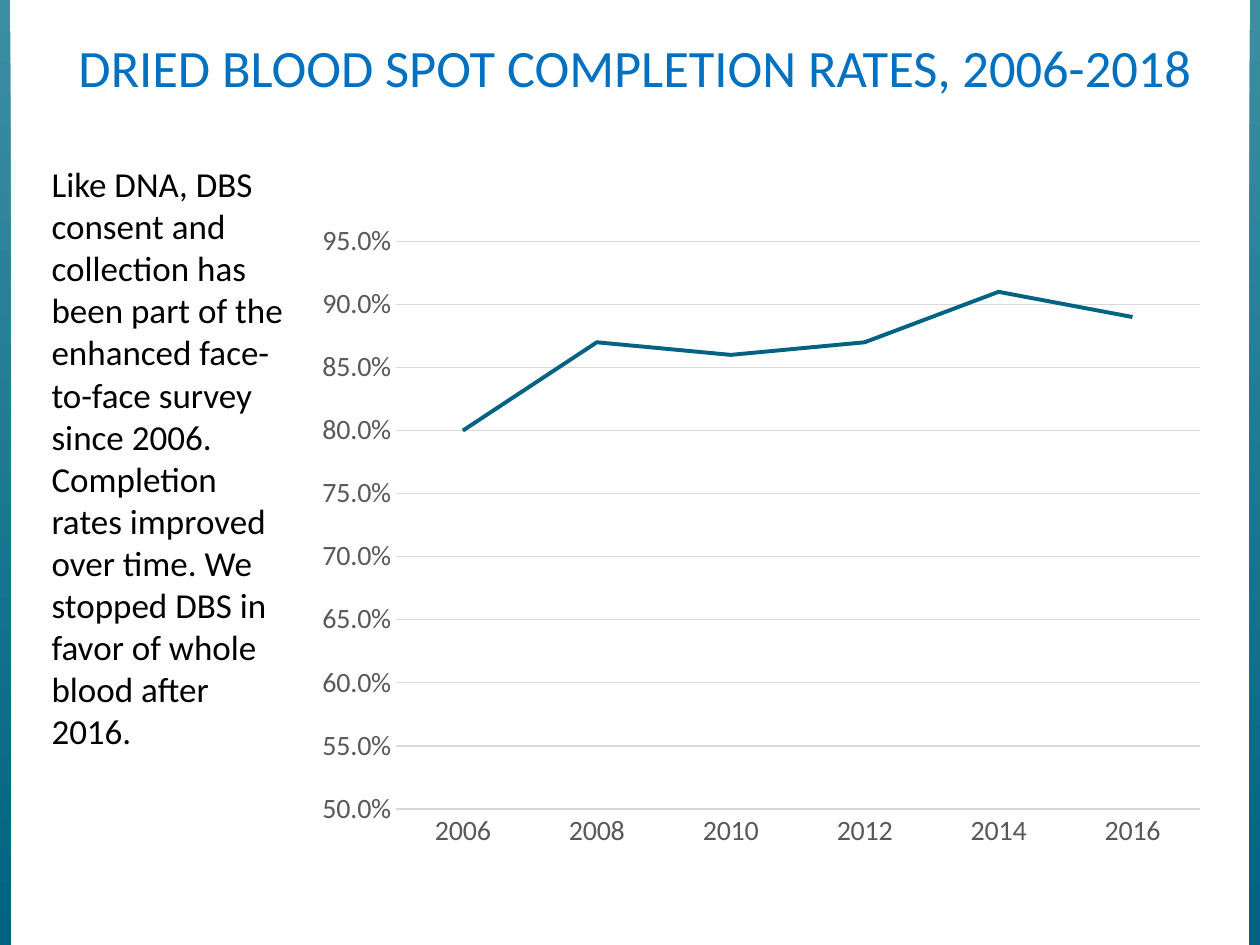
from dataclasses import dataclass

from pptx import Presentation
from pptx.chart.data import CategoryChartData
from pptx.dml.color import RGBColor
from pptx.enum.chart import XL_CHART_TYPE, XL_TICK_MARK
from pptx.enum.shapes import MSO_SHAPE
from pptx.enum.text import MSO_ANCHOR, PP_ALIGN
from pptx.util import Cm, Pt

LINE_CHART = XL_CHART_TYPE.LINE
NO_TICK = XL_TICK_MARK.NONE
RECTANGLE = MSO_SHAPE.RECTANGLE
TOP = MSO_ANCHOR.TOP
LEFT, CENTER = PP_ALIGN.LEFT, PP_ALIGN.CENTER

FONT = "Calibri"
TEAL, LIGHT_TEAL, BLUE = "006382", "3C8EA1", "0070C0"
BLACK, AXIS_GRAY, GRID_GRAY = "000000", "595959", "D9D9D9"

SLIDE_WIDTH, SLIDE_HEIGHT, EDGE_WIDTH = 25.4, 19.05, 0.21
COMPLETION_RATES = {
    "2006": 0.8,
    "2008": 0.87,
    "2010": 0.86,
    "2012": 0.87,
    "2014": 0.91,
    "2016": 0.89,
}
EXPLANATION = (
    "Like DNA, DBS consent and collection has been part of the enhanced "
    "face-to-face survey since 2006. Completion rates improved over time. "
    "We stopped DBS in favor of whole blood after 2016."
)


@dataclass(frozen=True)
class Box:
    """Position and size in centimetres."""

    left: float
    top: float
    width: float
    height: float

    def lengths(self):
        return Cm(self.left), Cm(self.top), Cm(self.width), Cm(self.height)


EDGES = [
    Box(left, 0, EDGE_WIDTH, SLIDE_HEIGHT)
    for left in (0, SLIDE_WIDTH - EDGE_WIDTH)
]
TITLE_BOX = Box(1.06, 0.58, 23.5, 1.3)
EXPLANATION_BOX = Box(0.79, 3.16, 5.33, 12.22)
CHART_BOX = Box(6.13, 4.26, 18.42, 13.1)


def color(value: str) -> RGBColor:
    return RGBColor.from_string(value)


def format_font(font, size: float, ink: str) -> None:
    font.name = FONT
    font.size = Pt(size)
    font.bold = False
    font.color.rgb = color(ink)


def format_line(line, ink: str, width: float) -> None:
    line.color.rgb = color(ink)
    line.width = Pt(width)


def write_text(shape, text: str, *, size: float, ink: str,
               align=LEFT) -> None:
    frame = shape.text_frame
    frame.word_wrap = True
    frame.vertical_anchor = TOP
    paragraph = frame.paragraphs[0]
    paragraph.alignment = align
    run = paragraph.add_run()
    run.text = text
    format_font(run.font, size, ink)


def draw_edge(slide, box: Box) -> None:
    edge = slide.shapes.add_shape(RECTANGLE, *box.lengths())
    edge.shadow.inherit = False
    edge.line.fill.background()
    edge.fill.gradient()
    edge.fill.gradient_angle = 260
    for stop, position, shade in zip(
        edge.fill.gradient_stops, (0, 1), (LIGHT_TEAL, TEAL)
    ):
        stop.position = position
        stop.color.rgb = color(shade)


def draw_rate_chart(slide, box: Box, rates: dict[str, float]) -> None:
    rate_data = CategoryChartData(number_format="0.0%")
    rate_data.categories = list(rates)
    rate_data.add_series("Series 1", list(rates.values()))
    chart = slide.shapes.add_chart(LINE_CHART, *box.lengths(), rate_data).chart
    chart.has_legend = False
    chart.has_title = False
    format_font(chart.font, 16, BLACK)

    years, percents = chart.category_axis, chart.value_axis
    for axis in (years, percents):
        axis.major_tick_mark = axis.minor_tick_mark = NO_TICK
        format_font(axis.tick_labels.font, 16, AXIS_GRAY)
    format_line(years.format.line, GRID_GRAY, 0.75)
    percents.format.line.fill.background()
    percents.minimum_scale, percents.maximum_scale = 0.5, 0.95
    percents.major_unit = 0.05
    percents.tick_labels.number_format = "0.0%"
    percents.tick_labels.number_format_is_linked = False
    format_line(percents.major_gridlines.format.line, GRID_GRAY, 0.75)

    plot = chart.plots[0]
    plot.vary_by_categories = False
    completion = plot.series[0]
    completion.smooth = False
    format_line(completion.format.line, TEAL, 2.25)


def main() -> None:
    presentation = Presentation()
    presentation.slide_width = Cm(SLIDE_WIDTH)
    presentation.slide_height = Cm(SLIDE_HEIGHT)
    slide = presentation.slides.add_slide(presentation.slide_layouts[5])

    for edge_box in EDGES:
        draw_edge(slide, edge_box)

    title = slide.shapes.title
    title.left, title.top, title.width, title.height = TITLE_BOX.lengths()
    write_text(title, "DRIED BLOOD SPOT COMPLETION RATES, 2006-2018",
               size=30, ink=BLUE, align=CENTER)
    explanation = slide.shapes.add_textbox(*EXPLANATION_BOX.lengths())
    write_text(explanation, EXPLANATION, size=20, ink=BLACK)
    draw_rate_chart(slide, CHART_BOX, COMPLETION_RATES)

    presentation.save("out.pptx")


if __name__ == "__main__":
    main()
